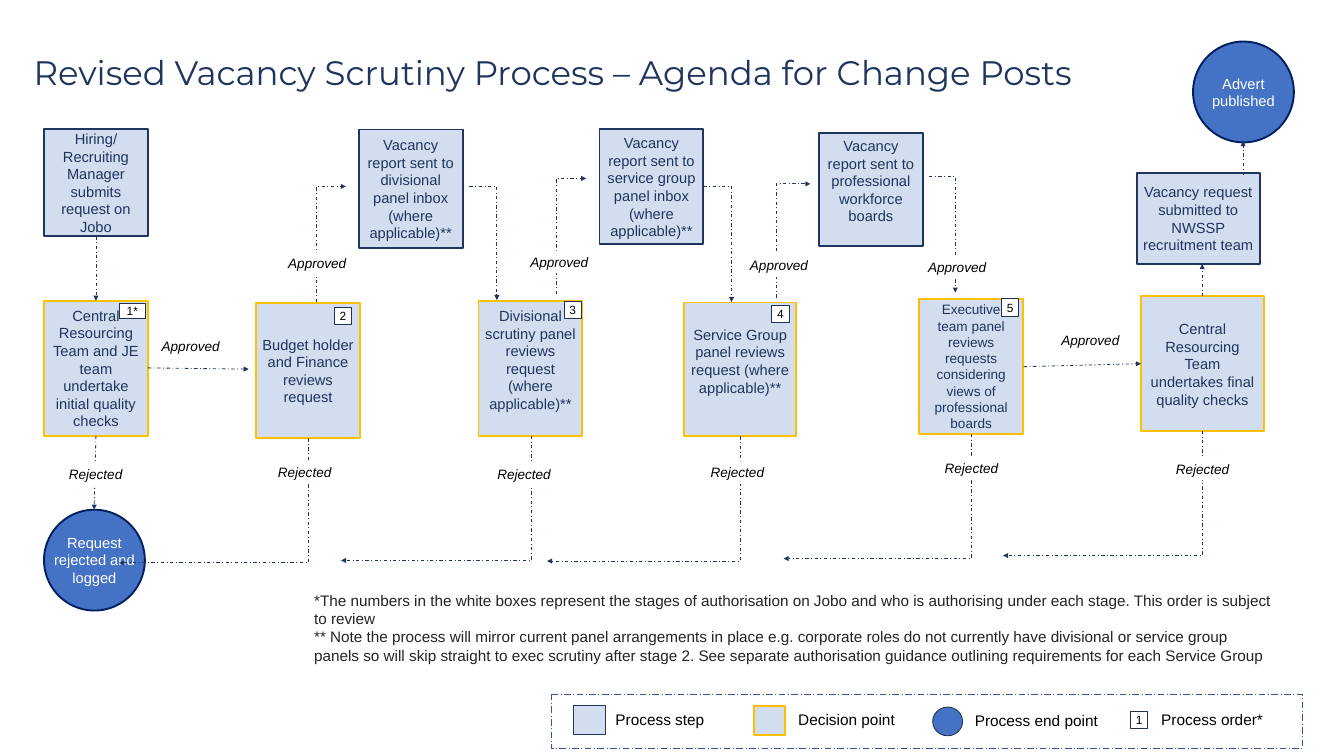
"""Build the revised vacancy scrutiny process slide."""
from typing import NamedTuple

from lxml import etree
from pptx import Presentation
from pptx.dml.color import RGBColor
from pptx.enum.dml import MSO_LINE
from pptx.enum.shapes import MSO_CONNECTOR, MSO_SHAPE
from pptx.enum.text import MSO_ANCHOR, MSO_AUTO_SIZE, PP_ALIGN
from pptx.oxml.ns import qn
from pptx.shapes.autoshape import Shape
from pptx.slide import Slide
from pptx.util import Inches, Pt

RECTANGLE, ELLIPSE, PROCESS = MSO_SHAPE.RECTANGLE, MSO_SHAPE.OVAL, MSO_SHAPE.FLOWCHART_PROCESS
STRAIGHT, ELBOW = MSO_CONNECTOR.STRAIGHT, MSO_CONNECTOR.ELBOW
DASH_DOT, LONG_DASH_DOT = MSO_LINE.DASH_DOT, MSO_LINE.LONG_DASH_DOT
LEFT, CENTER = PP_ALIGN.LEFT, PP_ALIGN.CENTER
TOP, MIDDLE = MSO_ANCHOR.TOP, MSO_ANCHOR.MIDDLE
NO_AUTO_SIZE = MSO_AUTO_SIZE.NONE

NAVY = RGBColor(0x1F, 0x35, 0x5E)
DARK_NAVY = RGBColor(0x00, 0x20, 0x60)
BADGE_NAVY = RGBColor(0x1E, 0x32, 0x56)
FRAME_BLUE = RGBColor(0x32, 0x54, 0x91)
BLUE = RGBColor(0x44, 0x72, 0xC4)
PALE_BLUE = RGBColor(0xD2, 0xDE, 0xEF)
GOLD = RGBColor(0xFF, 0xC0, 0x00)
WHITE = RGBColor(0xFF, 0xFF, 0xFF)
BLACK = RGBColor(0x00, 0x00, 0x00)
CHARCOAL = RGBColor(0x24, 0x24, 0x24)

Point = tuple[float, float]


class Look(NamedTuple):
    kind: MSO_SHAPE
    fill: RGBColor | None
    line: RGBColor | None
    weight: float = 1
    size: float = 17.3
    color: RGBColor = BLACK
    italic: bool = False
    align: PP_ALIGN = CENTER
    anchor: MSO_ANCHOR = MIDDLE
    wrap: bool = True
    side_inset: float = 0.1


class Box(NamedTuple):
    look: Look
    left: float
    top: float
    width: float
    height: float
    text: str = ""
    size: float | None = None
    bottom_inset: float = 0.05


class Arrow(NamedTuple):
    start: Point
    end: Point
    bend: str = ""


STEP = Look(RECTANGLE, PALE_BLUE, NAVY, 2.25, color=NAVY)
DECISION = STEP._replace(line=GOLD)
END_POINT = Look(ELLIPSE, BLUE, DARK_NAVY, 2.25, color=WHITE, wrap=False)
LABEL = Look(RECTANGLE, WHITE, None, size=16, italic=True, anchor=TOP)
BADGE = Look(RECTANGLE, WHITE, BADGE_NAVY, size=14, wrap=False, side_inset=0)
KEY_TEXT = Look(RECTANGLE, WHITE, None, size=18.1, align=LEFT, anchor=TOP, side_inset=0.06)
KEY_STEP = Look(PROCESS, PALE_BLUE, NAVY)
KEY_DECISION = KEY_STEP._replace(line=GOLD, weight=2.25)
KEY_END = Look(ELLIPSE, BLUE, BADGE_NAVY)
KEY_FRAME = Look(PROCESS, None, FRAME_BLUE)
NOTES = Look(RECTANGLE, None, None, size=18, color=CHARCOAL, align=LEFT, anchor=TOP)

TITLE = "Revised Vacancy Scrutiny Process – Agenda for Change Posts"
NOTES_TEXT = (
    "*The numbers in the white boxes represent the stages of authorisation on Jobo and who is "
    "authorising under each stage. This order is subject to review\n"
    "** Note the process will mirror current panel arrangements in place e.g. corporate roles do "
    "not currently have divisional or service group panels so will skip straight to exec scrutiny "
    "after stage 2. See separate authorisation guidance outlining requirements for each Service Group"
)

FLOW_BOXES = [
    Box(STEP, 0.72, 2.11, 1.7, 1.76, "Hiring/ Recruiting Manager submits request on Jobo"),
    Box(STEP, 5.87, 2.12, 1.7, 1.94,
        "Vacancy report sent to divisional panel inbox (where applicable)**"),
    Box(STEP, 9.81, 2.11, 1.7, 1.89,
        "Vacancy report sent to service group panel inbox (where applicable)**"),
    Box(STEP, 13.4, 2.18, 1.7, 1.84,
        "Vacancy report sent to professional workforce boards", bottom_inset=0.33),
    Box(STEP, 18.6, 2.83, 2.01, 1.49, "Vacancy request submitted to NWSSP recruitment team"),
    Box(DECISION, 0.72, 4.92, 1.7, 2.21,
        "Central Resourcing Team and JE team undertake initial quality checks"),
    Box(DECISION, 4.19, 4.96, 1.7, 2.21, "Budget holder and Finance reviews request"),
    Box(DECISION, 7.83, 4.92, 1.7, 2.21,
        "Divisional scrutiny panel reviews request (where applicable)**", bottom_inset=0.33),
    Box(DECISION, 11.19, 4.95, 1.84, 2.19,
        "Service Group panel reviews request (where applicable)**", bottom_inset=0.33),
    Box(DECISION, 15.04, 4.89, 1.7, 2.21,
        "Executive team panel reviews requests considering views of professional boards", 16),
    Box(DECISION, 18.67, 4.85, 2.01, 2.21,
        "Central Resourcing Team undertakes final quality checks"),
    Box(END_POINT, 0.72, 8.34, 1.65, 1.65, "Request\nrejected and\nlogged"),
    Box(END_POINT, 19.52, 0.68, 1.65, 1.65, "Advert\npublished"),
]

REJECTION_DROP = 2.04
REJECTIONS = [(5.04, 7.17, 1.95), (8.69, 7.13, 5.58), (12.11, 7.14, 8.95),
              (15.89, 7.1, 12.82), (19.67, 7.05, 16.41)]
ARROWS = [
    Arrow((2.42, 6.02), (4.07, 6.04)),
    Arrow((16.75, 6), (18.67, 5.95)),
    Arrow((1.57, 3.87), (1.57, 4.92)),
    Arrow((1.57, 7.13), (1.54, 8.34)),
    Arrow((19.67, 4.85), (19.67, 4.32)),
    Arrow((20.34, 2.87), (20.34, 2.31)),
    Arrow((5.18, 4.94), (5.66, 3.05), "vertical"),
    Arrow((9.1, 4.81), (9.59, 2.92), "vertical"),
    Arrow((12.7, 4.87), (13.26, 3.01), "vertical"),
    Arrow((7.68, 3.05), (8.13, 4.91), "horizontal"),
    Arrow((11.51, 3.05), (11.97, 4.94), "horizontal"),
    Arrow((15.2, 2.88), (15.63, 4.79), "horizontal"),
    *(Arrow((x, y), (end, y + REJECTION_DROP), "vertical") for x, y, end in REJECTIONS),
]

APPROVED = [(2.46, 5.48, 1.32), (17.18, 5.39, 1.32), (4.53, 4.12, 1.32),
            (8.49, 4.1, 1.32), (12.15, 4.16, 1.19), (15, 4.19, 1.32)]
REJECTED = [(0.73, 7.58), (4.15, 7.55), (7.74, 7.58), (11.23, 7.55), (15.06, 7.48), (18.84, 7.49)]
STAGES = [(5.47, 5.03), (9.23, 4.93), (12.63, 4.99), (16.39, 4.89)]
ANNOTATIONS = [
    *(Box(LABEL, x, y, width, 0.37, "Approved") for x, y, width in APPROVED),
    *(Box(LABEL, x, y, 1.67, 0.37, "Rejected") for x, y in REJECTED),
    Box(BADGE, 1.95, 4.96, 0.43, 0.25, "1*"),
    *(Box(BADGE, x, y, 0.28, 0.28, str(stage)) for stage, (x, y) in enumerate(STAGES, 2)),
    Box(NOTES, 5.04, 9.62, 15.95, 1.31, NOTES_TEXT),
]
KEY = [
    Box(KEY_FRAME, 9.02, 11.37, 12.29, 0.88),
    Box(KEY_STEP, 9.39, 11.55, 0.51, 0.47),
    Box(KEY_TEXT, 10.01, 11.57, 1.74, 0.41, "Process step"),
    Box(KEY_DECISION, 12.34, 11.55, 0.51, 0.47),
    Box(KEY_TEXT, 13, 11.57, 2.12, 0.41, "Decision point"),
    Box(KEY_END, 15.26, 11.57, 0.49, 0.47),
    Box(KEY_TEXT, 15.89, 11.59, 2.29, 0.41, "Process end point"),
    Box(BADGE, 18.5, 11.64, 0.28, 0.28, "1"),
    Box(KEY_TEXT, 18.94, 11.57, 2.29, 0.41, "Process order*"),
]


def write_text(shape: Shape, box: Box) -> None:
    """Fill a shape with the text of its box."""
    look, frame = box.look, shape.text_frame
    frame.text = box.text
    frame.word_wrap = look.wrap
    frame.vertical_anchor = look.anchor
    frame.margin_left = frame.margin_right = Inches(look.side_inset)
    frame.margin_top, frame.margin_bottom = Inches(0.05), Inches(box.bottom_inset)
    for paragraph in frame.paragraphs:
        paragraph.alignment = look.align
        font = paragraph.font
        font.name, font.size, font.italic = "Arial", Pt(box.size or look.size), look.italic
        font.color.rgb = look.color


def draw_box(page: Slide, box: Box) -> None:
    """Draw one box in its look."""
    look = box.look
    shape = page.shapes.add_shape(look.kind, Inches(box.left), Inches(box.top),
                                  Inches(box.width), Inches(box.height))
    shape.shadow.inherit = False
    if look.fill is None:
        shape.fill.background()
    else:
        shape.fill.solid()
        shape.fill.fore_color.rgb = look.fill
    if look.line is None:
        shape.line.fill.background()
    else:
        shape.line.color.rgb = look.line
        shape.line.width = Pt(look.weight)
    if look is KEY_FRAME:
        shape.line.dash_style = LONG_DASH_DOT
    if box.text:
        write_text(shape, box)


def draw_arrow(page: Slide, arrow: Arrow) -> None:
    """Draw a dashed arrow, straight or with one corner."""
    (x1, y1), (x2, y2) = arrow.start, arrow.end
    if arrow.bend == "vertical":
        center_x, center_y, half_x, half_y = (x1 + x2) / 2, (y1 + y2) / 2, (x2 - x1) / 2, (y2 - y1) / 2
        x1, y1 = center_x - half_y, center_y + half_x
        x2, y2 = center_x + half_y, center_y - half_x
    connector = page.shapes.add_connector(ELBOW if arrow.bend else STRAIGHT, Inches(x1),
                                          Inches(y1), Inches(x2), Inches(y2))
    connector.line.color.rgb = NAVY
    connector.line.width = Pt(1)
    connector.line.dash_style = DASH_DOT
    properties = connector._element.spPr
    if arrow.bend:
        properties.find(qn("a:prstGeom")).set("prst", "bentConnector2")
    if arrow.bend == "vertical":
        properties.find(qn("a:xfrm")).set("rot", "5400000")
    etree.SubElement(properties.find(qn("a:ln")), qn("a:tailEnd"), type="triangle")
    etree.SubElement(properties, qn("a:effectLst"))


def draw_title(page: Slide) -> None:
    """Place and format the slide title."""
    title = page.shapes.title
    title.left, title.top, title.width, title.height = map(Inches, (0.45, 0.92, 19.89, 0.61))
    frame = title.text_frame
    frame.text = TITLE
    frame.auto_size = NO_AUTO_SIZE
    frame.vertical_anchor = MIDDLE
    paragraph = frame.paragraphs[0]
    paragraph.alignment, paragraph.line_spacing = LEFT, 0.9
    font = paragraph.font
    font.name, font.size, font.color.rgb = "Montserrat", Pt(40), NAVY


def main() -> None:
    """Build and save the deck."""
    deck = Presentation()
    deck.slide_width, deck.slide_height = Inches(21.99), Inches(12.37)
    page = deck.slides.add_slide(deck.slide_layouts[5])
    draw_title(page)
    for box in FLOW_BOXES:
        draw_box(page, box)
    for arrow in ARROWS:
        draw_arrow(page, arrow)
    for box in ANNOTATIONS + KEY:
        draw_box(page, box)
    deck.save("out.pptx")


if __name__ == "__main__":
    main()
